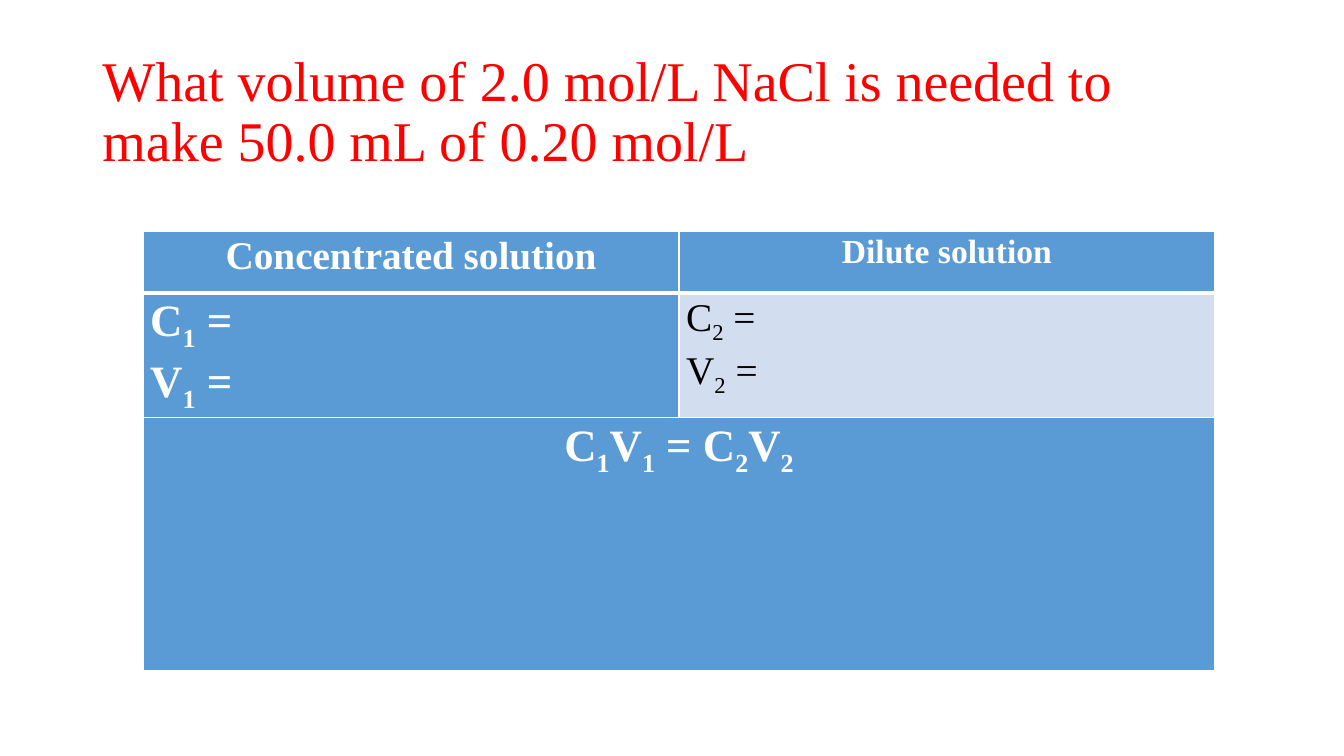
from dataclasses import dataclass
from itertools import groupby

from lxml import etree
from pptx import Presentation
from pptx import util as u
from pptx.dml.color import RGBColor
from pptx.enum import text
from pptx.oxml.ns import qn


@dataclass(frozen=True)
class Theme:
    font: str = "Times New Roman"
    red: str = "FF0000"
    white: str = "FFFFFF"
    black: str = "000000"
    blue: str = "5B9BD5"
    pale: str = "D2DEEF"
    title: int = 40
    large: int = 32
    medium: int = 28
    small: int = 24


class Slide:
    def __init__(self, deck, theme):
        self.theme = theme
        self.page = deck.slides.add_slide(deck.slide_layouts[5])

    def style(self, para, size, color, bold, align, spacing):
        para.alignment = align
        para.line_spacing = spacing
        para.font.name = self.theme.font
        para.font.size = u.Pt(size)
        para.font.bold = bold
        para.font.color.rgb = RGBColor.from_string(color)

    def title(self, words, left, top, width, height):
        box = self.page.shapes.title
        box.left, box.top, box.width, box.height = map(u.Pt, (left, top, width, height))
        frame = box.text_frame
        frame.text = words
        frame.word_wrap = True
        frame.auto_size = text.MSO_AUTO_SIZE.NONE
        frame.vertical_anchor = text.MSO_ANCHOR.MIDDLE
        self.style(frame.paragraphs[0], self.theme.title, self.theme.red,
                   False, text.PP_ALIGN.LEFT, 0.9)

    def table(self, left, top, widths, heights):
        frame = self.page.shapes.add_table(
            len(heights), len(widths), u.Pt(left), u.Pt(top),
            u.Pt(sum(widths)), u.Pt(sum(heights)))
        table = frame.table
        for column, width in zip(table.columns, widths):
            column.width = u.Pt(width)
        for row, height in zip(table.rows, heights):
            row.height = u.Pt(height)
        return table

    def cell(self, cell, lines, size, fill, color, bold=True,
             align=text.PP_ALIGN.LEFT, top=1, bottom=1):
        cell.margin_left = cell.margin_right = u.Pt(5.15)
        cell.margin_top = cell.margin_bottom = 0
        cell.fill.solid()
        cell.fill.fore_color.rgb = RGBColor.from_string(fill)
        self.borders(cell, {"L": 1, "R": 1, "T": top, "B": bottom})
        frame = cell.text_frame
        for index, line in enumerate(lines):
            para = frame.add_paragraph() if index else frame.paragraphs[0]
            self.style(para, size, color, bold, align, 1.07)
            self.formula(para, line)

    def formula(self, para, line):
        for subscript, letters in groupby(line, str.isdigit):
            span = para.add_run()
            span.text = "".join(letters)
            if subscript:
                span.font._element.set("baseline", "-25000")

    def borders(self, cell, weights):
        properties = cell._tc.get_or_add_tcPr()
        for index, (side, weight) in enumerate(weights.items()):
            line = etree.Element(qn(f"a:ln{side}"), w=str(u.Pt(weight)))
            fill = etree.SubElement(line, qn("a:solidFill"))
            etree.SubElement(fill, qn("a:srgbClr"), val=self.theme.white)
            properties.insert(index, line)


def main():
    deck = Presentation()
    deck.slide_width, deck.slide_height = u.Pt(960), u.Pt(540)
    theme = Theme()
    slide = Slide(deck, theme)
    slide.title("What volume of 2.0 mol/L NaCl is needed to make 50.0 mL of 0.20 mol/L",
                66, 28.75, 828, 104.4)

    table = slide.table(102.2, 165.2, [382.8] * 2, [43.9, 89.3, 180.7])
    center = text.PP_ALIGN.CENTER
    headings = [("Concentrated solution", theme.medium), ("Dilute solution", theme.small)]
    for column, (heading, size) in enumerate(headings):
        slide.cell(table.cell(0, column), [heading], size, theme.blue, theme.white,
                   align=center, bottom=3)
    slide.cell(table.cell(1, 0), ["C1 =", "V1 ="], theme.large, theme.blue, theme.white, top=3)
    slide.cell(table.cell(1, 1), ["C2 =", "V2 ="], theme.medium, theme.pale, theme.black,
               bold=False, top=3)
    equation = table.cell(2, 0)
    equation.merge(table.cell(2, 1))
    slide.cell(equation, ["C1V1 = C2V2"], theme.large, theme.blue, theme.white, align=center)
    deck.save("out.pptx")


if __name__ == "__main__":
    main()
